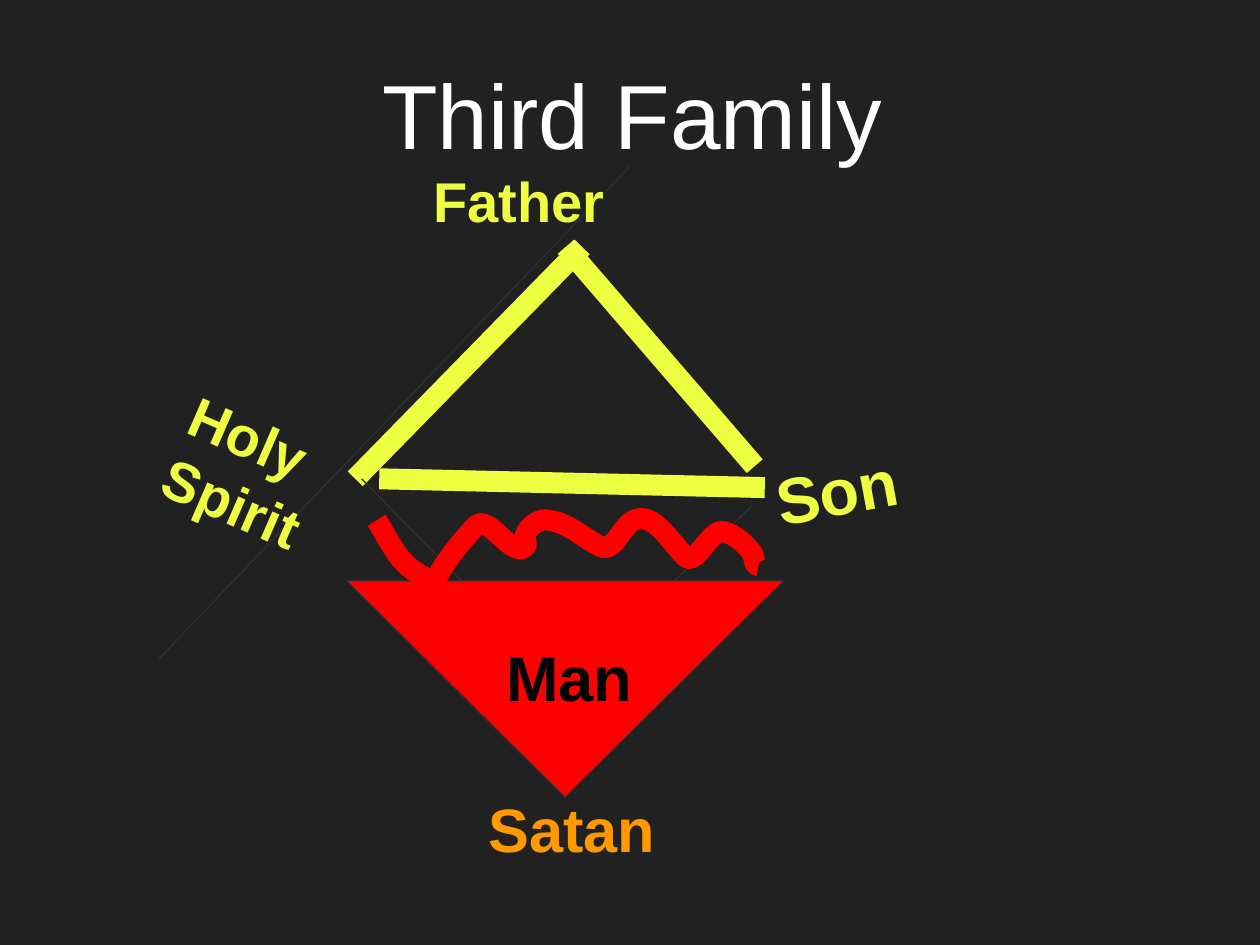
import dataclasses
import pptx
import pptx.util
import pptx.dml.color
import pptx.enum.shapes
import pptx.enum.text
import pptx.oxml

Inches = pptx.util.Inches
Pt = pptx.util.Pt
Align = pptx.enum.text.PP_ALIGN
Anchor = pptx.enum.text.MSO_ANCHOR
Shape = pptx.enum.shapes.MSO_SHAPE


@dataclasses.dataclass(frozen=True)
class Theme:
    font: str = "Arial"
    back: str = "212121"
    white: str = "FFFFFF"
    black: str = "000000"
    gold: str = "EEFF41"
    amber: str = "FF9900"
    red: str = "FF0000"
    faint: str = "303030"
    title: int = 52
    label: int = 32
    son: int = 37
    man: int = 36
    satan: int = 35
    bar: float = 12
    hair: float = 0.75


THEME = Theme()


def color(code):
    return pptx.dml.color.RGBColor.from_string(code)


def write(shape, text, size, ink, bold=True, align=Align.LEFT,
          anchor=Anchor.TOP, inset=(0.1, 0.1, 0.1, 0.1)):
    frame = shape.text_frame
    frame.word_wrap = True
    frame.auto_size = pptx.enum.text.MSO_AUTO_SIZE.NONE
    frame.vertical_anchor = anchor
    (frame.margin_left, frame.margin_top,
     frame.margin_right, frame.margin_bottom) = map(Inches, inset)
    para = frame.paragraphs[0]
    para.alignment = align
    run = para.add_run()
    run.text = text
    font = run.font
    font.name, font.size, font.bold = THEME.font, Pt(size), bold
    font.color.rgb = color(ink)


def label(slide, box, text, size, ink, turn=0, **style):
    shape = slide.shapes.add_textbox(*map(Inches, box))
    shape.rotation = turn
    write(shape, text, size, ink, **style)


def stroke(shape, ink, width):
    shape.line.color.rgb = color(ink)
    shape.line.width = Pt(width)


def line(slide, start, end, ink, width):
    link = slide.shapes.add_connector(
        pptx.enum.shapes.MSO_CONNECTOR.STRAIGHT, *map(Inches, start + end))
    stroke(link, ink, width)
    link._element.spPr.append(pptx.oxml.parse_xml(
        '<a:effectLst xmlns:a="http://schemas.openxmlformats.org/drawingml/2006/main"/>'))


def head(slide, box):
    shape = slide.shapes.title
    shape.left, shape.top, shape.width, shape.height = map(Inches, box)
    write(shape, "Third Family", THEME.title, THEME.white, bold=False,
          align=Align.CENTER, anchor=Anchor.BOTTOM, inset=(0.05, 0, 0.05, 0))


def upper(slide, box):
    left, top, wide, high = box
    base = top + high
    bars = [
        ((left, base), (left + 1.8, top)),
        ((left + 1.67, top), (left + 3.17, base - 0.1)),
        ((left + 0.19, base), (left + wide, base + 0.07)),
    ]
    for start, end in bars:
        line(slide, start, end, THEME.gold, THEME.bar)
    names = [
        ("Father", (left + 0.52, top - 0.74, 2.3, 0.74), THEME.label, 0),
        ("Son", (left + 3.23, top + 1.46, 1.79, 0.82), THEME.son, 349.5),
        ("Holy Spirit", (left - 1.54, top + 1.15, 1.36, 1.28), THEME.label, 23.5),
    ]
    for text, place, size, turn in names:
        label(slide, place, text, size, THEME.gold, turn)


def lower(slide, box):
    left, top, wide, high = box
    shape = slide.shapes.add_shape(Shape.ISOSCELES_TRIANGLE, *map(Inches, box))
    shape.rotation = 180
    shape.shadow.inherit = False
    shape.fill.solid()
    shape.fill.fore_color.rgb = color(THEME.red)
    stroke(shape, THEME.faint, THEME.hair)
    label(slide, (left + 1.17, top, 1.51, 1.21), "Man", THEME.man, THEME.black,
          anchor=Anchor.BOTTOM, inset=(0.1, 0.1, 0.1, 0.15))
    label(slide, (left + 0.47, top + high - 0.1, 2.64, 1.16), "Satan",
          THEME.satan, THEME.amber, align=Align.CENTER,
          inset=(0.1, 0.05, 0.1, 0.05))


def curve(knots, steps=10):
    for i in range(0, len(knots) - 1, 3):
        for n in range(1, steps + 1):
            t = n / steps
            mix = ((1 - t) ** 3, 3 * t * (1 - t) ** 2, 3 * t * t * (1 - t), t ** 3)
            yield tuple(sum(m * p[k] for m, p in zip(mix, knots[i:i + 4]))
                        for k in (0, 1))


def wave(slide, box):
    left, top = box[:2]
    knots = [
        (0, 0.02), (0.09, 0.16), (0.16, 0.34), (0.31, 0.43),
        (0.36, 0.46), (0.45, 0.53), (0.48, 0.47),
        (0.56, 0.32), (0.67, 0.19), (0.79, 0.06),
        (0.89, -0.03), (1.08, 0.33), (1.18, 0.23),
        (1.2, 0.21), (1.17, 0.17), (1.18, 0.14),
        (1.2, 0.07), (1.29, 0), (1.37, 0.02),
        (1.52, 0.04), (1.64, 0.16), (1.78, 0.23),
        (1.88, 0.28), (1.94, 0.07), (2.04, 0.02),
        (2.19, -0.06), (2.33, 0.19), (2.45, 0.31),
        (2.54, 0.39), (2.65, 0.07), (2.76, 0.11),
        (2.85, 0.14), (2.93, 0.21), (2.98, 0.28),
        (3, 0.31), (2.99, 0.38), (3.03, 0.38),
    ]
    knots = [(Inches(left + x), Inches(top + y)) for x, y in knots]
    path = slide.shapes.build_freeform(*knots[0], scale=1.0)
    path.add_line_segments(list(curve(knots)), close=False)
    shape = path.convert_to_shape()
    shape.shadow.inherit = False
    shape.fill.background()
    stroke(shape, THEME.red, THEME.bar)


def main():
    deck = pptx.Presentation()
    deck.slide_width, deck.slide_height = Inches(10), Inches(7.5)
    slide = deck.slides.add_slide(deck.slide_layouts[5])
    slide.background.fill.solid()
    slide.background.fill.fore_color.rgb = color(THEME.back)
    head(slide, (0.52, 0.17, 9, 1.16))
    line(slide, (5, 1.32), (1.26, 5.23), THEME.faint, THEME.hair)
    upper(slide, (2.82, 1.96, 3.25, 1.84))
    line(slide, (2.87, 3.8), (4.43, 5.39), THEME.faint, THEME.hair)
    line(slide, (5.97, 4.01), (4.46, 5.48), THEME.faint, THEME.hair)
    lower(slide, (2.75, 4.61, 3.47, 1.72))
    wave(slide, (2.99, 4.11, 3.03, 0.49))
    deck.save("out.pptx")


if __name__ == "__main__":
    main()
